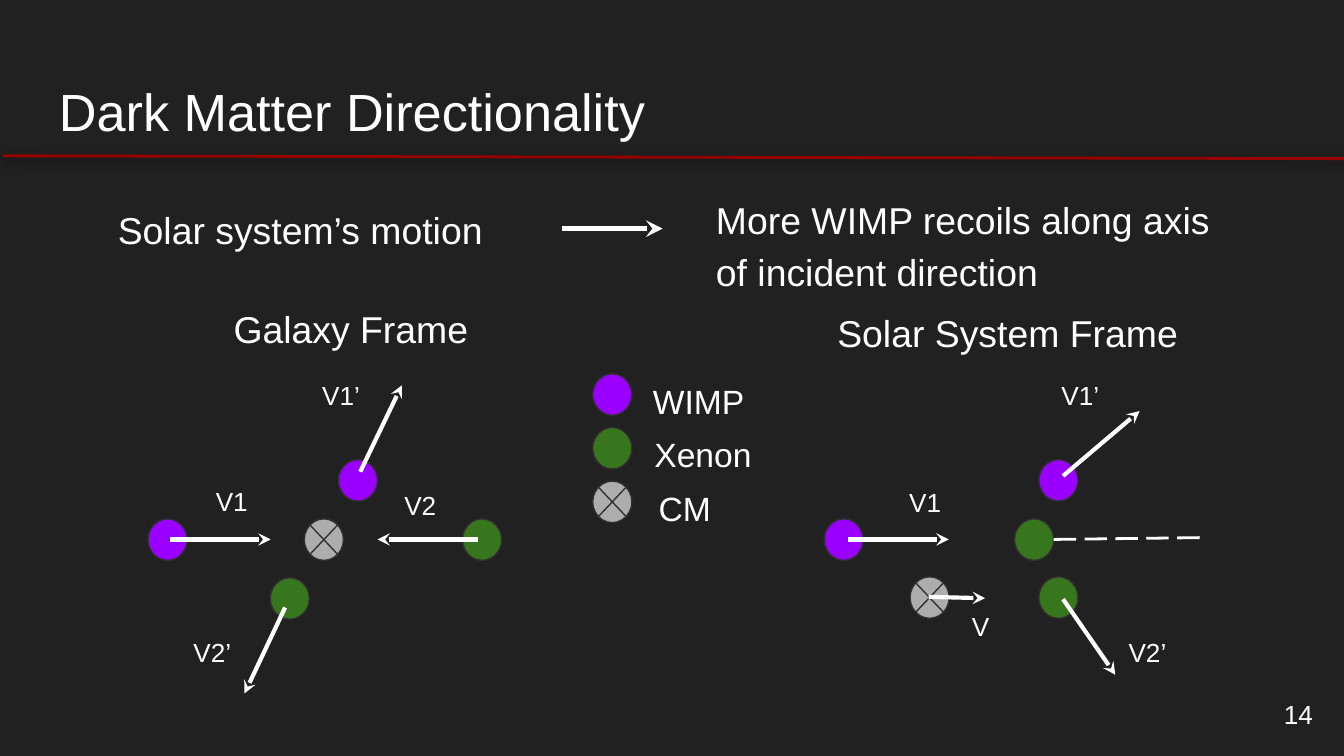
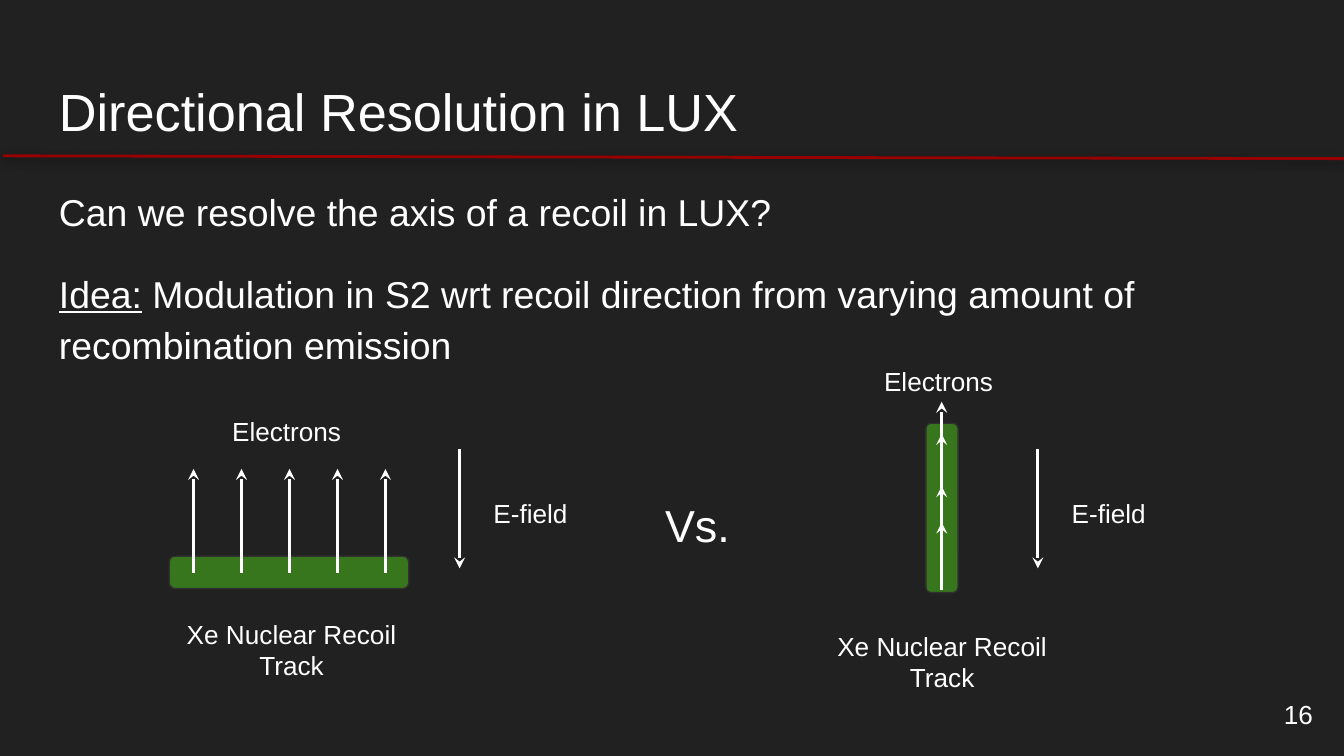
from lxml.etree import SubElement
from pptx import Presentation
from pptx.dml.color import RGBColor
from pptx.enum.dml import MSO_LINE
from pptx.enum.shapes import MSO_CONNECTOR, MSO_SHAPE
from pptx.enum.text import MSO_ANCHOR, PP_ALIGN
from pptx.oxml.ns import qn
from pptx.util import Pt

BACKGROUND = RGBColor(0x21, 0x21, 0x21)
WHITE = RGBColor(0xFF, 0xFF, 0xFF)
RED = RGBColor(0x98, 0x00, 0x00)
OUTLINE = RGBColor(0x30, 0x30, 0x30)
PURPLE = RGBColor(0x99, 0x00, 0xFF)
GREEN = RGBColor(0x38, 0x76, 0x1D)
GREY = RGBColor(0xAD, 0xAD, 0xAD)

FONT = "Arial"
INSET = Pt(7.2)
BODY = {"line_spacing": 1.15, "space_after": Pt(16)}
CENTERED = {"alignment": PP_ALIGN.CENTER}

# Particle kind: preset shape and fill
PARTICLES = {
    "WIMP": (MSO_SHAPE.OVAL, PURPLE),
    "Xenon": (MSO_SHAPE.OVAL, GREEN),
    "CM": (MSO_SHAPE.FLOWCHART_SUMMING_JUNCTION, GREY),
}


def apply(target, values):
    for name, value in values.items():
        setattr(target, name, value)


class Deck:
    """Holds the shared style and the page being drawn."""

    def __init__(self):
        self.deck = Presentation()
        apply(self.deck, {"slide_width": Pt(720), "slide_height": Pt(405)})
        self.page = None

    def new_page(self, title, number):
        self.page = self.deck.slides.add_slide(self.deck.slide_layouts[6])
        fill = self.page.background.fill
        fill.solid()
        fill.fore_color.rgb = BACKGROUND
        rule = self.line((1.5, 83.5), (720.5, 85), 1.5, RED, head=False)
        self.cast_shadow(rule)
        self.text(title, 24.5, 35.5, 671, 45, 28)
        self.text(number, 667.5, 367, 43, 31, 14,
                  {"alignment": PP_ALIGN.RIGHT}, MSO_ANCHOR.MIDDLE)

    def cast_shadow(self, connector):
        effects = connector._element.spPr.find(qn("a:effectLst"))
        shadow = SubElement(effects, qn("a:outerShdw"), blurRad=str(Pt(4.5)),
                            dist=str(Pt(1.5)), dir="5400000", rotWithShape="0")
        color = SubElement(shadow, qn("a:srgbClr"), val="000000")
        SubElement(color, qn("a:alpha"), val="50000")

    def text(self, content, left, top, width, height, size,
             paragraph_format=None, anchor=MSO_ANCHOR.TOP):
        box = self.page.shapes.add_textbox(Pt(left), Pt(top), Pt(width), Pt(height))
        frame = box.text_frame
        apply(frame, {"word_wrap": True, "vertical_anchor": anchor,
                      "margin_left": INSET, "margin_right": INSET,
                      "margin_top": INSET, "margin_bottom": INSET})
        self.fill_para(frame.paragraphs[0], [(content, False)], size, paragraph_format)
        return frame

    def fill_para(self, para, spans, size, paragraph_format=None):
        apply(para, paragraph_format or {})
        for content, underline in spans:
            span = para.add_run()
            span.text = content
            apply(span.font, {"name": FONT, "size": Pt(size), "underline": underline})
            span.font.color.rgb = WHITE

    def label(self, content, left, top, width=43, paragraph_format=None):
        self.text(content, left, top, width, 31, 14, paragraph_format)

    def line(self, start, end, width=2.25, color=WHITE, head=True, dash=None):
        points = [Pt(value) for value in (*start, *end)]
        connector = self.page.shapes.add_connector(MSO_CONNECTOR.STRAIGHT, *points)
        connector.line.color.rgb = color
        apply(connector.line, {"width": Pt(width), "dash_style": dash})
        properties = connector._element.spPr
        if head:
            SubElement(properties.find(qn("a:ln")), qn("a:tailEnd"), type="stealth")
        SubElement(properties, qn("a:effectLst"))
        return connector

    def shape(self, preset, fill, left, top, width, height):
        shape = self.page.shapes.add_shape(preset, Pt(left), Pt(top), Pt(width), Pt(height))
        shape.shadow.inherit = False
        shape.fill.solid()
        shape.fill.fore_color.rgb = fill
        shape.line.color.rgb = OUTLINE
        shape.line.width = Pt(0.75)
        return shape

    def particle(self, kind, left, top):
        self.shape(*PARTICLES[kind], left, top, 21, 22.25)

    def track(self, left, top, length, rotation=0):
        track = self.shape(MSO_SHAPE.ROUNDED_RECTANGLE, GREEN, left, top, length, 17.25)
        track.adjustments[0] = 0.17
        track.rotation = rotation


def directionality(deck):
    deck.new_page("Dark Matter Directionality", "14")

    # Statement and frame headings
    for content, left, top, width in (
        ("Solar system’s motion", 56, 100, 223),
        ("More WIMP recoils along axis of incident direction", 376.5, 95, 296),
        ("Galaxy Frame", 118, 153.5, 151),
        ("Solar System Frame", 441.5, 155.5, 200),
    ):
        deck.text(content, left, top, width, 45, 20, BODY)
    deck.line((301, 122.5), (355, 122.5), 3)

    # Particles in the galaxy frame, then in the solar system frame
    for kind, left, top in (
        ("WIMP", 79.25, 278), ("Xenon", 247.75, 278), ("CM", 163, 278),
        ("Xenon", 144.75, 309.5), ("WIMP", 181.25, 246.25),
        ("WIMP", 441.5, 278), ("Xenon", 543.5, 278), ("WIMP", 556.5, 246.25),
        ("Xenon", 556.5, 309), ("CM", 487.5, 309),
    ):
        deck.particle(kind, left, top)

    # Velocities, frame by frame
    for start, end in (
        ((91, 289), (145, 289)), ((256.25, 289), (202.25, 289)),
        ((152.75, 325.5), (131, 371.5)), ((193, 252.75), (215.25, 206.5)),
        ((454.25, 289), (508.25, 289)), ((569.5, 255), (610.5, 220.25)),
        ((569.5, 321), (597.5, 361.5)), ((497.5, 319.75), (527.75, 320.5)),
    ):
        deck.line(start, end)
    deck.line((564.5, 289), (645, 288), 1.5, head=False, dash=MSO_LINE.LONG_DASH)

    for content, left, top, width in (
        ("V1", 108.5, 252.75, 32), ("V2", 209.5, 255, 32),
        ("V1’", 165.5, 196, 43), ("V2’", 96.5, 333.5, 43),
        ("V1", 480, 253.5, 32), ("V1’", 561.5, 196, 43),
        ("V2’", 597.5, 333.5, 43), ("V", 513.5, 319.75, 24),
    ):
        deck.label(content, left, top, width)

    # Legend
    for row, (kind, left) in enumerate(zip(PARTICLES, (342.75, 343.5, 345.75))):
        deck.particle(kind, 317.5, 200.25 + 28.75 * row)
        deck.text(kind, left, 193.75 + 28.5 * row, 78, 35, 18, BODY)


def resolution(deck):
    deck.new_page("Directional Resolution in LUX", "16")

    # Question and idea
    frame = deck.text("Can we resolve the axis of a recoil in LUX?",
                      24.5, 90.75, 671, 114.5, 20, {"line_spacing": 1.15})
    idea = [("Idea:", True),
            (" Modulation in S2 wrt recoil direction from varying amount of "
             "recombination emission", False)]
    deck.fill_para(frame.add_paragraph(), idea, 20, {**BODY, "space_before": Pt(16)})

    # Track across the field
    deck.track(90.75, 298, 128.25)
    for column in range(5):
        x = 103.7 + 25.7 * column
        deck.line((x, 306.75), (x, 251.25), 1.5)

    # Track along the field
    deck.track(459.25, 263.5, 90.75, 90)
    for tail, tip in ((316, 260.5), (288, 232.5), (316, 280), (270.75, 215.25)):
        deck.line((504.5, tail), (504.5, tip), 1.5)

    # Field arrows and captions for both cases
    for field, electrons, caption in (
        (246.25, (117.25, 215.25), (92.25, 324)),
        (556, (466.5, 188.75), (440.75, 330.5)),
    ):
        deck.line((field, 240.5), (field, 304.5), 1.5)
        deck.label("E-field", field + 11, 259.25, 75.5)
        deck.label("Electrons", *electrons, 75.5)
        deck.label("Xe Nuclear Recoil Track", *caption, 128, CENTERED)
    deck.text("Vs.", 349.25, 259.25, 57.5, 26.5, 24)


def main():
    deck = Deck()
    directionality(deck)
    resolution(deck)
    deck.deck.save("out.pptx")


if __name__ == "__main__":
    main()
